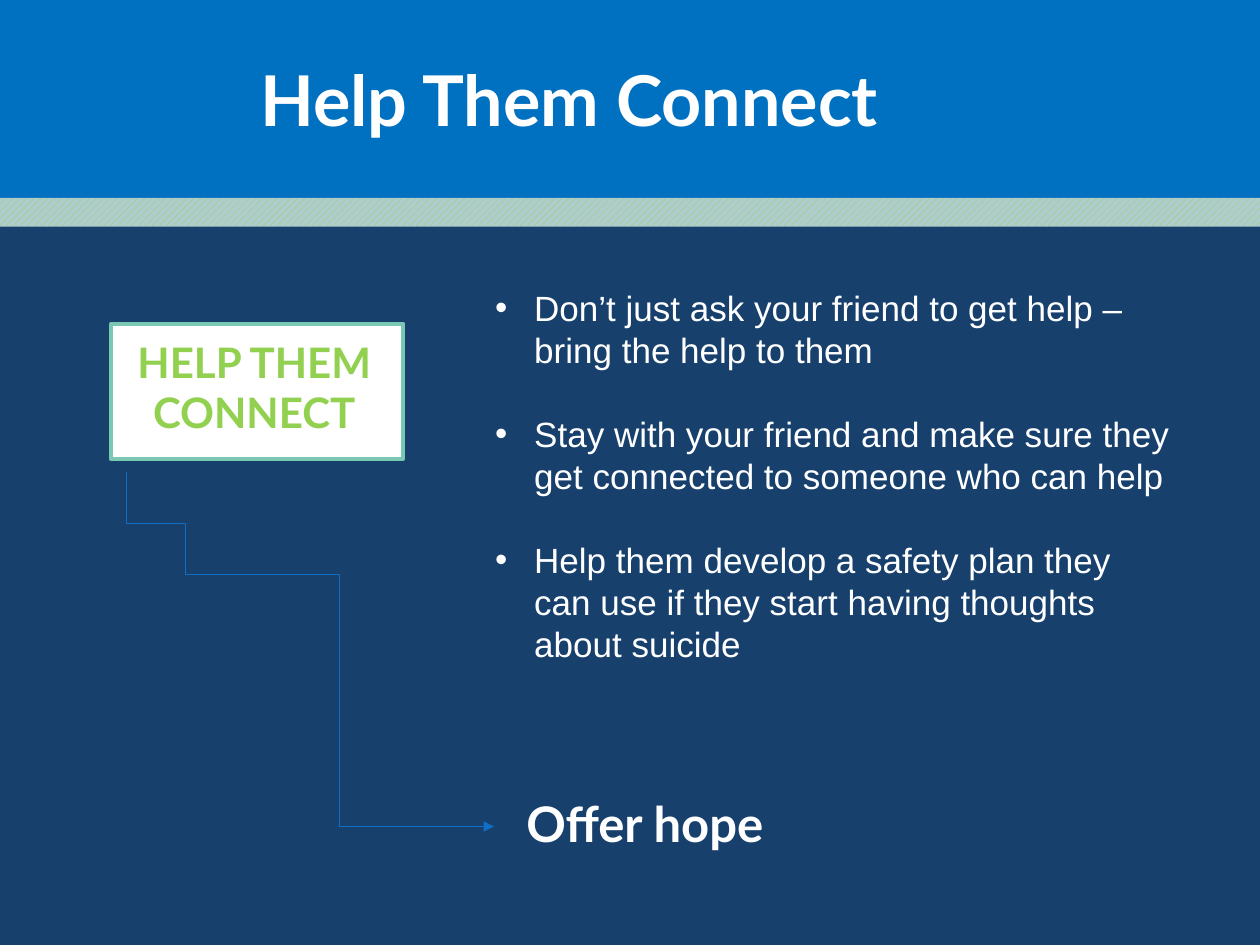
from dataclasses import dataclass

import pptx
import pptx.dml.color
import pptx.enum.dml
import pptx.enum.shapes
import pptx.enum.text
import pptx.oxml.ns
import pptx.util
from lxml import etree

Cm, Pt = pptx.util.Cm, pptx.util.Pt
Align = pptx.enum.text.PP_ALIGN
qn = pptx.oxml.ns.qn


@dataclass
class Box:
    left: float
    top: float
    width: float
    height: float

    def place(self) -> list:
        return [Cm(n) for n in (self.left, self.top, self.width, self.height)]


@dataclass
class Label:
    text: str
    box: Box
    size: int
    tint: str = "FFFFFF"
    align: Align = Align.CENTER


@dataclass
class Bend:
    start: tuple[float, float]
    end: tuple[float, float]
    turn: int = 0
    arrow: bool = False


def paint(color, tint: str) -> None:
    color.rgb = pptx.dml.color.RGBColor.from_string(tint)


def add_rect(slide, box: Box, tint: str | None = None):
    kind = pptx.enum.shapes.MSO_SHAPE.RECTANGLE
    rect = slide.shapes.add_shape(kind, *box.place())
    rect.shadow.inherit = False
    rect.line.fill.background()
    if tint:
        rect.fill.solid()
        paint(rect.fill.fore_color, tint)
    return rect


def add_frame(slide, box: Box):
    frame = slide.shapes.add_textbox(*box.place()).text_frame
    frame.word_wrap = True
    return frame


def style(para, face: str, size: int, tint: str, bold: bool = False) -> None:
    para.font.name, para.font.size, para.font.bold = face, Pt(size), bold
    paint(para.font.color, tint)


def add_label(slide, label: Label) -> None:
    para = add_frame(slide, label.box).paragraphs[0]
    para.text, para.alignment = label.text, label.align
    style(para, "Lato", label.size, label.tint, True)


def add_list(slide, box: Box, items: list[str]) -> None:
    frame = add_frame(slide, box)
    frame.margin_top = Cm(0.98)
    for i, text in enumerate(items):
        para = frame.paragraphs[0] if i == 0 else frame.add_paragraph()
        para.text = text
        props = para._p.get_or_add_pPr()
        props.set("marL", str(Cm(0.79)))
        props.set("indent", str(-Cm(0.79)))
        etree.SubElement(props, qn("a:buFont")).set("typeface", "Arial")
        etree.SubElement(props, qn("a:buChar")).set("char", "•")
        para.line_spacing = Pt(24)
        if i:
            para.space_before = Pt(24)
        style(para, "Arial", 20, "FFFFFF")


def add_bend(slide, bend: Bend) -> None:
    kind = pptx.enum.shapes.MSO_CONNECTOR.ELBOW
    ends = [Cm(n) for n in (*bend.start, *bend.end)]
    link = slide.shapes.add_connector(kind, *ends)
    link.line.width = Pt(0.75)
    paint(link.line.color, "0F6FC6")
    props = link._element.spPr
    if bend.turn:
        props.find(qn("a:xfrm")).set("rot", str(bend.turn * 60000))
    if bend.arrow:
        tail = etree.SubElement(props.find(qn("a:ln")), qn("a:tailEnd"))
        tail.set("type", "triangle")
    etree.SubElement(props, qn("a:effectLst"))


LABELS = [
    Label("Help Them Connect", Box(3.73, 1.02, 15.49, 1.96), 40),
    Label("HELP THEM CONNECT", Box(2.24, 6.65, 5.77, 2.31), 24, "92D050"),
    Label("Offer hope", Box(10.36, 15.88, 8, 1.45), 28, align=Align.LEFT),
]
ITEMS = [
    "Don’t just ask your friend to get help – bring the help to them",
    "Stay with your friend and make sure they get connected to someone who can help",
    "Help them develop a safety plan they can use if they start having thoughts about suicide",
]
BENDS = [
    Bend((3.73, 11.58), (9.96, 16.66), arrow=True),
    Bend((4.17, 9.96), (2.11, 11.15), turn=270),
]


def main() -> None:
    deck = pptx.Presentation()
    deck.slide_width, deck.slide_height = Cm(25.4), Cm(19.05)
    slide = deck.slides.add_slide(deck.slide_layouts[6])

    # Background, dark panel and striped band
    slide.background.fill.solid()
    paint(slide.background.fill.fore_color, "0070C0")
    add_rect(slide, Box(0, 4.11, 25.4, 14.94), "17406D")
    band = add_rect(slide, Box(0, 3.99, 25.4, 0.58))
    band.fill.patterned()
    band.fill.pattern = pptx.enum.dml.MSO_PATTERN.WIDE_UPWARD_DIAGONAL
    paint(band.fill.fore_color, "92D050")
    paint(band.fill.back_color, "AFCDCD")

    # White card behind the step name
    card = add_rect(slide, Box(2.24, 6.53, 5.89, 2.72), "FFFFFF")
    card.line.width = Pt(2.5)
    paint(card.line.color, "7AC8B3")

    # Text
    for label in LABELS:
        add_label(slide, label)
    add_list(slide, Box(9.73, 4.8, 14.17, 9.65), ITEMS)

    # Stepped path to the last line
    for bend in BENDS:
        add_bend(slide, bend)

    deck.save("out.pptx")


if __name__ == "__main__":
    main()
